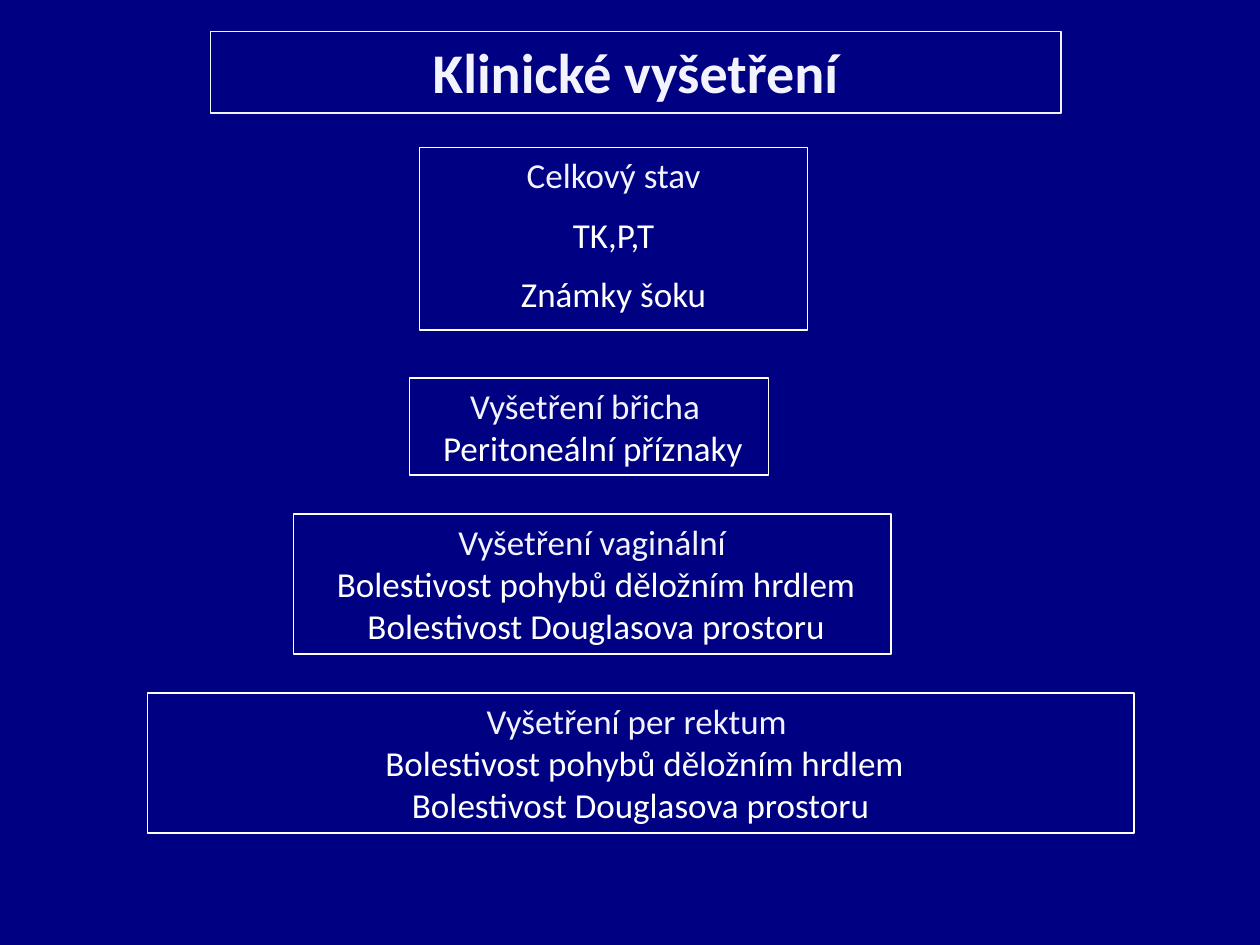
from pptx import Presentation
from pptx.dml.color import RGBColor
from pptx.enum.text import PP_ALIGN
from pptx.util import Inches, Pt

NAVY, WHITE, PALE = "000082", "FFFFFF", "F3F3FF"


def paint(color, code):
    color.rgb = RGBColor.from_string(code)


class Page:
    """Holds the style and the current slide."""

    font = "Calibri"

    def __init__(self, deck):
        self.slide = deck.slides.add_slide(deck.slide_layouts[6])
        fill = self.slide.background.fill
        fill.solid()
        paint(fill.fore_color, NAVY)

    def box(self, spot, lines, size=20, bold=False, edge=WHITE, gap=0, wrap=True):
        shape = self.slide.shapes.add_textbox(*map(Inches, spot))
        paint(shape.line.color, edge)
        shape.line.width = Pt(1)
        frame = shape.text_frame
        frame.word_wrap = wrap
        frame.text = "\n".join(lines)
        for row, para in enumerate(frame.paragraphs):
            para.alignment = PP_ALIGN.CENTER
            para.space_before = Pt(gap if row else 0)
            font = para.runs[0].font
            font.name, font.size, font.bold = self.font, Pt(size), bold
            paint(font.color, WHITE if row else PALE)


def main():
    deck = Presentation()
    deck.slide_width, deck.slide_height = Inches(10), Inches(7.5)
    page = Page(deck)
    neck = " Bolestivost pohybů děložním hrdlem"
    pouch = "Bolestivost Douglasova prostoru"

    page.box((1.67, 0.25, 6.75, 0.65), ["Klinické vyšetření"],
             size=32, bold=True, edge=PALE)
    page.box((3.33, 1.17, 3.08, 1.45),
             ["Celkový stav", " TK,P,T ", "Známky šoku"], gap=10)
    page.box((3.25, 3, 2.85, 0.77),
             ["Vyšetření břicha ", " Peritoneální příznaky"], wrap=False)
    page.box((2.33, 4.08, 4.74, 1.11),
             ["Vyšetření vaginální", neck, " " + pouch], wrap=False)
    page.box((1.17, 5.5, 7.83, 1.11),
             ["Vyšetření per rektum ", neck, pouch])
    deck.save("out.pptx")


if __name__ == "__main__":
    main()
